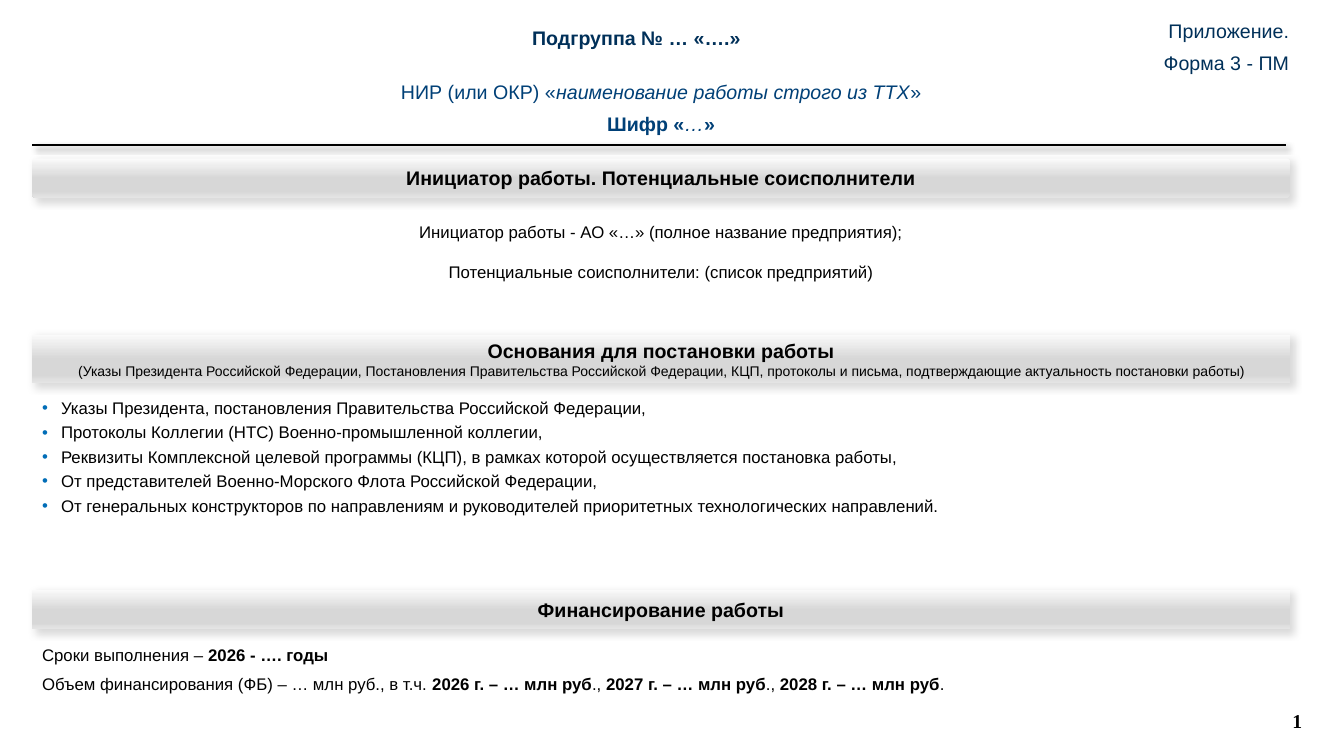
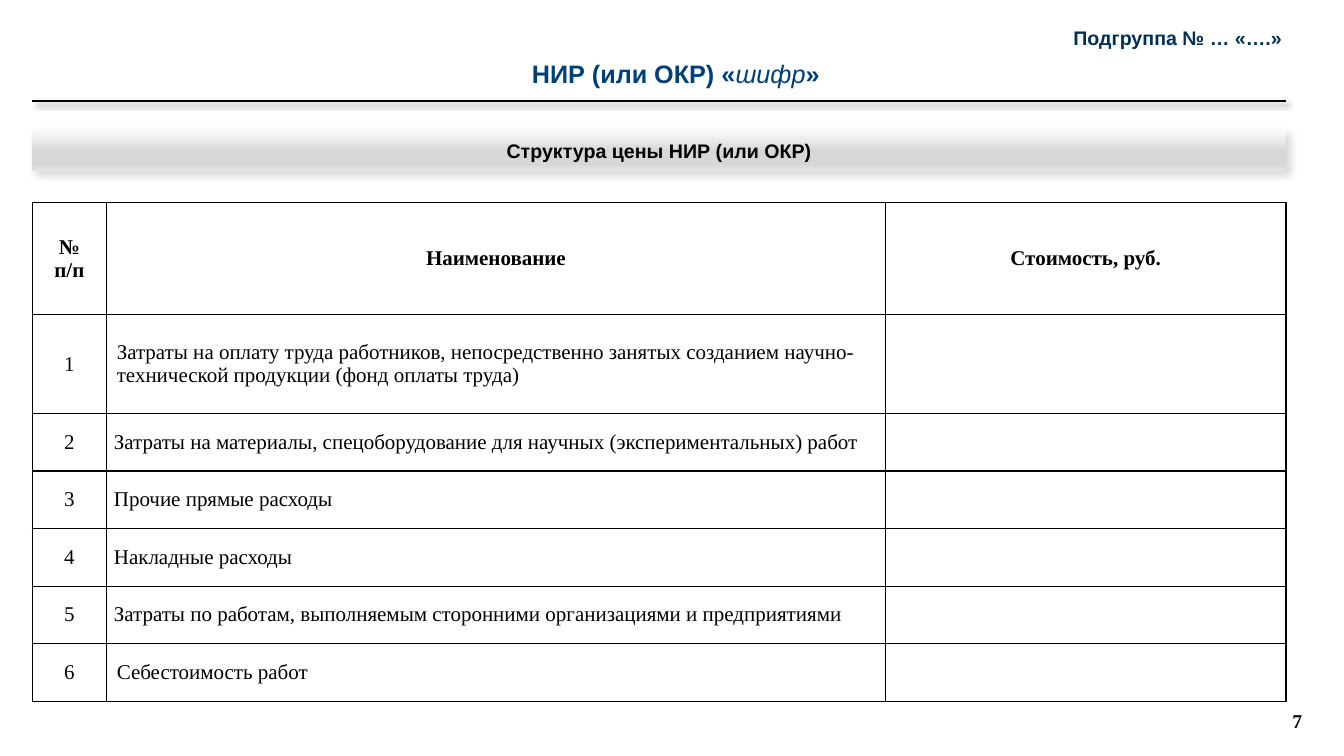
from lxml import etree
from pptx import Presentation
from pptx.dml.color import RGBColor
from pptx.enum.shapes import MSO_CONNECTOR, MSO_SHAPE
from pptx.enum.text import MSO_ANCHOR, PP_ALIGN
from pptx.oxml.ns import qn
from pptx.util import Cm, Pt

LEFT, CENTER, RIGHT, FULL = PP_ALIGN.LEFT, PP_ALIGN.CENTER, PP_ALIGN.RIGHT, PP_ALIGN.JUSTIFY
TOP, MIDDLE, BOTTOM = MSO_ANCHOR.TOP, MSO_ANCHOR.MIDDLE, MSO_ANCHOR.BOTTOM
RECT, ROUND = MSO_SHAPE.RECTANGLE, MSO_SHAPE.ROUNDED_RECTANGLE
STRAIGHT = MSO_CONNECTOR.STRAIGHT

BLACK = RGBColor(0, 0, 0)
WHITE = RGBColor(255, 255, 255)
NAVY = RGBColor(0x00, 0x30, 0x59)
BLUE = RGBColor(0x00, 0x40, 0x77)
DOT = RGBColor(0x01, 0x6D, 0xB7)
STOPS = [(0, "FAFAFA"), (51, "D7D7D7"), (83, "D7D7D7"), (100, "E4E4E4")]
SANS, SERIF = "Arial", "Times New Roman"
EDGE, WIDE, SPAN = 0.81, 31.7, 31.6
GROUP = "Подгруппа № … «….»"


def node(root, tag, **attrs):
    return etree.SubElement(root, qn(tag), {k: str(v) for k, v in attrs.items()})


def tint(root, color, **parts):
    clr = node(root, "a:srgbClr", val=color)
    for name, val in parts.items():
        node(clr, "a:" + name, val=val)


def shade(shape, alpha, blur, dist):
    for old in shape._element.spPr.findall(qn("a:effectLst")):
        shape._element.spPr.remove(old)
    box = node(shape._element.spPr, "a:effectLst")
    drop = node(box, "a:outerShdw", blurRad=Pt(blur), dist=Pt(dist),
                dir=45 * 60000, algn="tl", rotWithShape=0)
    tint(drop, "000000", alpha=alpha * 1000)


def fill(p, runs, size, color=BLACK, font=SANS, bold=False, align=LEFT):
    p.alignment = align
    p.font.size, p.font.name, p.font.bold = Pt(size), font, bold
    p.font.color.rgb = color
    for text, style in [(runs, None)] if isinstance(runs, str) else runs:
        run = p.add_run()
        run.text = text
        if style is not None:
            run.font.bold = "b" in style
            run.font.italic = "i" in style


class Deck:
    """Holds the shared style and the slide being built."""

    def __init__(self):
        self.prs = Presentation()
        self.prs.slide_width, self.prs.slide_height = Cm(33.87), Cm(19.05)

    def start(self, number, rule):
        self.slide = self.prs.slides.add_slide(self.prs.slide_layouts[6])
        self.rule(rule)
        self.text([number], 25.45, 17.65, 7.62, 1.02, 14, font=SERIF,
                  bold=True, align=RIGHT, anchor=MIDDLE)

    def rule(self, y):
        line = self.slide.shapes.add_connector(
            STRAIGHT, Cm(EDGE), Cm(y), Cm(EDGE + SPAN), Cm(y))
        line.line.color.rgb = BLACK
        line.line.width = Pt(1.5)
        shade(line, 40, 4, 3)

    def text(self, paras, x, y, w, h, size, anchor=TOP, flush=False,
             before=0, after=0, dots=False, **style):
        box = self.slide.shapes.add_textbox(Cm(x), Cm(y), Cm(w), Cm(h))
        frame = box.text_frame
        frame.word_wrap = True
        frame.vertical_anchor = anchor
        if flush:
            frame.margin_left = frame.margin_right = 0
            frame.margin_top = frame.margin_bottom = 0
        for i, runs in enumerate(paras):
            p = frame.add_paragraph() if i else frame.paragraphs[0]
            if dots:
                self.bullet(p)
            if i and before:
                p.space_before = Pt(before)
            if after:
                p.space_after = Pt(after)
            fill(p, runs, size, **style)

    def bullet(self, p):
        props = p._p.get_or_add_pPr()
        props.set("marL", str(Cm(0.48)))
        props.set("indent", str(-Cm(0.48)))
        tint(node(props, "a:buClr"), str(DOT))
        node(props, "a:buFont", typeface=SANS)
        node(props, "a:buChar", char="•")

    def head(self, paras, x, y, w, h, **style):
        self.text(paras, x, y, w, h, 14, color=NAVY, anchor=BOTTOM,
                  flush=True, before=6, **style)

    def band(self, title, y, w=WIDE, h=1.0, note=None, kind=RECT):
        bar = self.slide.shapes.add_shape(kind, Cm(EDGE), Cm(y), Cm(w), Cm(h))
        if kind == ROUND:
            bar.adjustments[0] = 0.09
        bar.fill.gradient()
        bar.fill.gradient_angle = 270
        stops = bar._element.spPr.find(".//" + qn("a:gsLst"))
        for old in list(stops):
            stops.remove(old)
        for pos, color in STOPS:
            tint(node(stops, "a:gs", pos=pos * 1000), color)
        bar.line.fill.background()
        shade(bar, 14, 6, 3)
        frame = bar.text_frame
        frame.word_wrap = True
        frame.vertical_anchor = MIDDLE
        frame.margin_left = frame.margin_right = Cm(0.2)
        frame.margin_top = frame.margin_bottom = Cm(0.1)
        p = frame.paragraphs[0]
        fill(p, title, 14, bold=True, align=CENTER)
        if note:
            p.add_line_break()
            run = p.add_run()
            run.text = note
            run.font.size, run.font.bold = Pt(10), False

    def table(self, rows, y, widths, heights):
        grid = self.slide.shapes.add_table(
            len(rows), len(widths), Cm(EDGE), Cm(y),
            Cm(sum(widths)), Cm(sum(heights))).table
        grid.first_row = grid.horz_banding = False
        for col, w in zip(grid.columns, widths):
            col.width = Cm(w)
        for i, (row, h) in enumerate(zip(rows, heights)):
            grid.rows[i].height = Cm(h)
            for j, text in enumerate(row):
                cell = grid.cell(i, j)
                self.frame(cell)
                if j == 1 and 1 < i < len(rows) - 1:
                    cell.margin_left = cell.margin_right = Cm(0.18)
                    cell.margin_top = cell.margin_bottom = 0
                if text:
                    fill(cell.text_frame.paragraphs[0], text, 15, font=SERIF,
                         bold=i == 0, align=LEFT if i and j else CENTER)

    def frame(self, cell):
        cell.vertical_anchor = MIDDLE
        props = cell._tc.get_or_add_tcPr()
        for side in "LRTB":
            line = node(props, "a:ln" + side, w=Pt(1))
            tint(node(line, "a:solidFill"), str(BLACK))
        cell.fill.solid()
        cell.fill.fore_color.rgb = WHITE


def main():
    deck = Deck()

    deck.start("1", 3.66)
    deck.head([GROUP], 10.26, 0.5, 11.56, 0.74, bold=True, align=CENTER)
    deck.head(["Приложение.", "Форма 3 - ПМ"], 22.86, 0, 9.63, 1.88, align=RIGHT)
    deck.text([
        [("НИР (или ОКР) «", ""), ("наименование работы строго из ТТХ", "i"), ("»", "")],
        [("Шифр «", "b"), ("…", "i"), ("»", "b")],
    ], EDGE, 1.88, WIDE, 1.68, 14, color=BLUE, align=CENTER, after=6)
    deck.band("Инициатор работы. Потенциальные соисполнители", 3.99, kind=ROUND)
    deck.text([
        "Инициатор работы - АО «…» (полное название предприятия);",
        "Потенциальные соисполнители: (список предприятий)",
    ], EDGE, 5.46, WIDE, 1.8, 12, align=CENTER, before=14)
    deck.band("Основания для постановки работы", 8.43, h=1.22,
              note="(Указы Президента Российской Федерации, Постановления Правительства "
                   "Российской Федерации, КЦП, протоколы и письма, подтверждающие "
                   "актуальность постановки работы)")
    deck.text([
        "Указы Президента, постановления Правительства Российской Федерации,",
        "Протоколы Коллегии (НТС) Военно-промышленной коллегии,",
        "Реквизиты Комплексной целевой программы (КЦП), в рамках которой "
        "осуществляется постановка работы,",
        "От представителей Военно-Морского Флота Российской Федерации,",
        "От генеральных конструкторов по направлениям и руководителей "
        "приоритетных технологических направлений.",
    ], EDGE, 9.9, WIDE, 3.25, 12, align=FULL, after=3, dots=True)
    deck.band("Финансирование работы", 14.86)
    deck.text([
        [("Сроки выполнения – ", ""), ("2026 - …. годы", "b")],
        [("Объем финансирования (ФБ) – … млн руб., в т.ч. ", ""),
         ("2026 г. – … млн руб", "b"), ("., ", ""),
         ("2027 г. – … млн руб", "b"), ("., ", ""),
         ("2028 г. – … млн руб", "b"), (".", "")],
    ], EDGE, 16.13, WIDE, 1.5, 12, after=6)

    deck.start("7", 2.54)
    deck.head([GROUP], 0.79, 0.5, 31.52, 0.74, bold=True, align=RIGHT)
    deck.text([[("НИР (или ОКР) «", "b"), ("шифр", "i"), ("»", "b")]],
              0.76, 1.35, 32.54, 1.02, 18, color=BLUE, align=CENTER)
    deck.band("Структура цены НИР (или ОКР)", 3.3, w=SPAN)
    costs = [
        "Затраты на оплату труда работников, непосредственно занятых созданием "
        "научно-технической продукции (фонд оплаты труда)",
        "Затраты на материалы, спецоборудование для научных (экспериментальных) работ",
        "Прочие прямые расходы",
        "Накладные расходы",
        "Затраты по работам, выполняемым сторонними организациями и предприятиями",
        "Себестоимость работ",
    ]
    rows = [("№ п/п", "Наименование", "Стоимость, руб.")]
    rows += [(str(n), cost, "") for n, cost in enumerate(costs, 1)]
    deck.table(rows, 5.11, [1.88, 19.62, 10.1], [2.82, 2.49] + [1.45] * 5)

    deck.prs.save("out.pptx")


if __name__ == "__main__":
    main()
